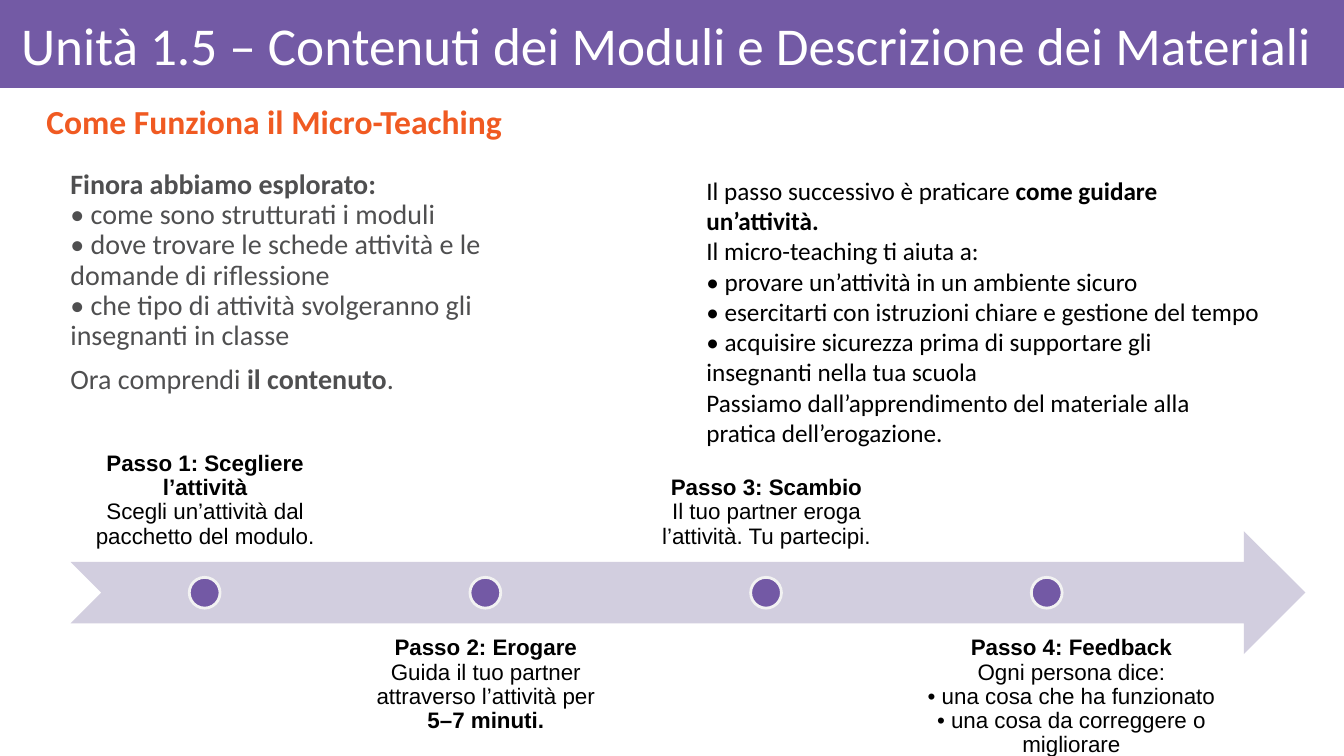
from pptx import Presentation
from pptx.dml.color import RGBColor
from pptx.enum import shapes, text
from pptx.util import Pt

BAND = RGBColor(0x73, 0x5A, 0xA5)
DOT = RGBColor(0x73, 0x59, 0xA5)
ARROW = RGBColor(0xD2, 0xCE, 0xDF)
RING = RGBColor(0xF2, 0xF2, 0xF2)
ORANGE = RGBColor(0xF0, 0x5A, 0x22)
GREY = RGBColor(0x4F, 0x4F, 0x50)
WHITE = RGBColor(0xFF, 0xFF, 0xFF)
BLACK = RGBColor(0, 0, 0)

KIND = shapes.MSO_SHAPE
ALIGN = text.PP_ALIGN
ANCHOR = text.MSO_ANCHOR

# Each paragraph is a list of (words, bold) runs.
LEARNED = [
    [("Finora abbiamo esplorato:", True), ("\n", False),
     ("• come sono strutturati i moduli", False)],
    [("• dove trovare le schede attività e le domande di riflessione", False)],
    [("• che tipo di attività svolgeranno gli insegnanti in classe", False)],
    [("Ora comprendi ", False), ("il contenuto", True), (".", False)],
]
NEXT = [
    [("Il passo successivo è praticare ", False),
     ("come guidare un’attività.", True)],
    [("Il micro-teaching ti aiuta a:", False)],
    [("• provare un’attività in un ambiente sicuro", False)],
    [("• esercitarti con istruzioni chiare e gestione del tempo", False)],
    [("• acquisire sicurezza prima di supportare gli insegnanti "
      "nella tua scuola", False)],
    [("Passiamo dall’apprendimento del materiale alla pratica "
      "dell’erogazione.", False)],
]
STEPS = [
    [[("Passo 1: Scegliere l’attività", True)],
     [("Scegli un’attività dal pacchetto del modulo.", False)]],
    [[("Passo 2: Erogare", True)],
     [("Guida il tuo partner attraverso l’attività per ", False),
      ("5–7 minuti.", True)]],
    [[("Passo 3: Scambio", True)],
     [("Il tuo partner eroga l’attività. Tu partecipi.", False)]],
    [[("Passo 4: Feedback", True)],
     [("Ogni persona dice:", False)],
     [("• una cosa che ha funzionato", False)],
     [("• una cosa da correggere o migliorare", False)]],
]


def add_form(slide, kind, box, fill, ring=None):
    form = slide.shapes.add_shape(kind, *map(Pt, box))
    form.shadow.inherit = False
    form.fill.solid()
    form.fill.fore_color.rgb = fill
    if ring is None:
        form.line.fill.background()
    else:
        form.line.color.rgb = ring
        form.line.width = Pt(2)


def add_text(slide, box, paras, size, color, font="Calibri", anchor=ANCHOR.TOP,
             align=ALIGN.LEFT, inset=(7.2, 3.6, 7.2, 3.6), indent=0, lead=0.9):
    """Add a wrapped text box and return its paragraphs."""
    frame = slide.shapes.add_textbox(*map(Pt, box)).text_frame
    frame.word_wrap = True
    frame.vertical_anchor = anchor
    (frame.margin_left, frame.margin_top,
     frame.margin_right, frame.margin_bottom) = map(Pt, inset)
    for i, runs in enumerate(paras):
        para = frame.add_paragraph() if i else frame.paragraphs[0]
        para.alignment = align
        para.line_spacing = lead
        para._p.get_or_add_pPr().set("marL", str(Pt(indent)))
        for words, bold in runs:
            if words == "\n":
                para.add_line_break()
                continue
            run = para.add_run()
            run.text = words
            run.font.name = font
            run.font.size = Pt(size)
            run.font.bold = bold
            run.font.color.rgb = color
    return frame.paragraphs


def add_step(slide, i, paras):
    """Add a dot on the arrow; odd steps are told above it, even ones below."""
    shift = 200.5 * i
    above = i % 2 == 0
    wide = 225.4 if i == len(STEPS) - 1 else 190.8
    add_text(slide, (51.1 + shift, 313.2 if above else 445.7, wide, 87.8),
             paras, 16, BLACK, "Arial", ANCHOR.BOTTOM if above else ANCHOR.TOP,
             ALIGN.CENTER, (8.96,) * 4)
    add_form(slide, KIND.OVAL, (135.2 + shift, 412.4, 22, 22), DOT, RING)


def main():
    deck = Presentation()
    deck.slide_width, deck.slide_height = Pt(960), Pt(540)
    slide = deck.slides.add_slide(deck.slide_layouts[6])

    add_form(slide, KIND.RECTANGLE, (0, 0, 960, 62.8), BAND)
    add_text(slide, (8, 6.5, 940.5, 56.2),
             [[("Unità 1.5 – Contenuti dei Moduli e Descrizione dei Materiali",
                False)]],
             38, WHITE, anchor=ANCHOR.MIDDLE, inset=(7.2, 4.3, 4.3, 4.3))
    add_text(slide, (8, 67, 940.5, 43.2),
             [[("Come Funziona il Micro-Teaching", True)]],
             24, ORANGE, anchor=ANCHOR.MIDDLE, align=ALIGN.JUSTIFY, indent=18)

    learned = add_text(slide, (22.3, 118, 363, 162.7), LEARNED, 20, GREY,
                       indent=20.9)
    learned[-1].space_before = Pt(10)

    add_form(slide, KIND.NOTCHED_RIGHT_ARROW, (50.4, 379.4, 882, 87.8), ARROW)
    for i, paras in enumerate(STEPS):
        add_step(slide, i, paras)
    add_text(slide, (476.6, 121.7, 432.7, 203.8), NEXT, 18, BLACK,
             indent=20.9, lead=1)

    deck.save("out.pptx")


if __name__ == "__main__":
    main()
